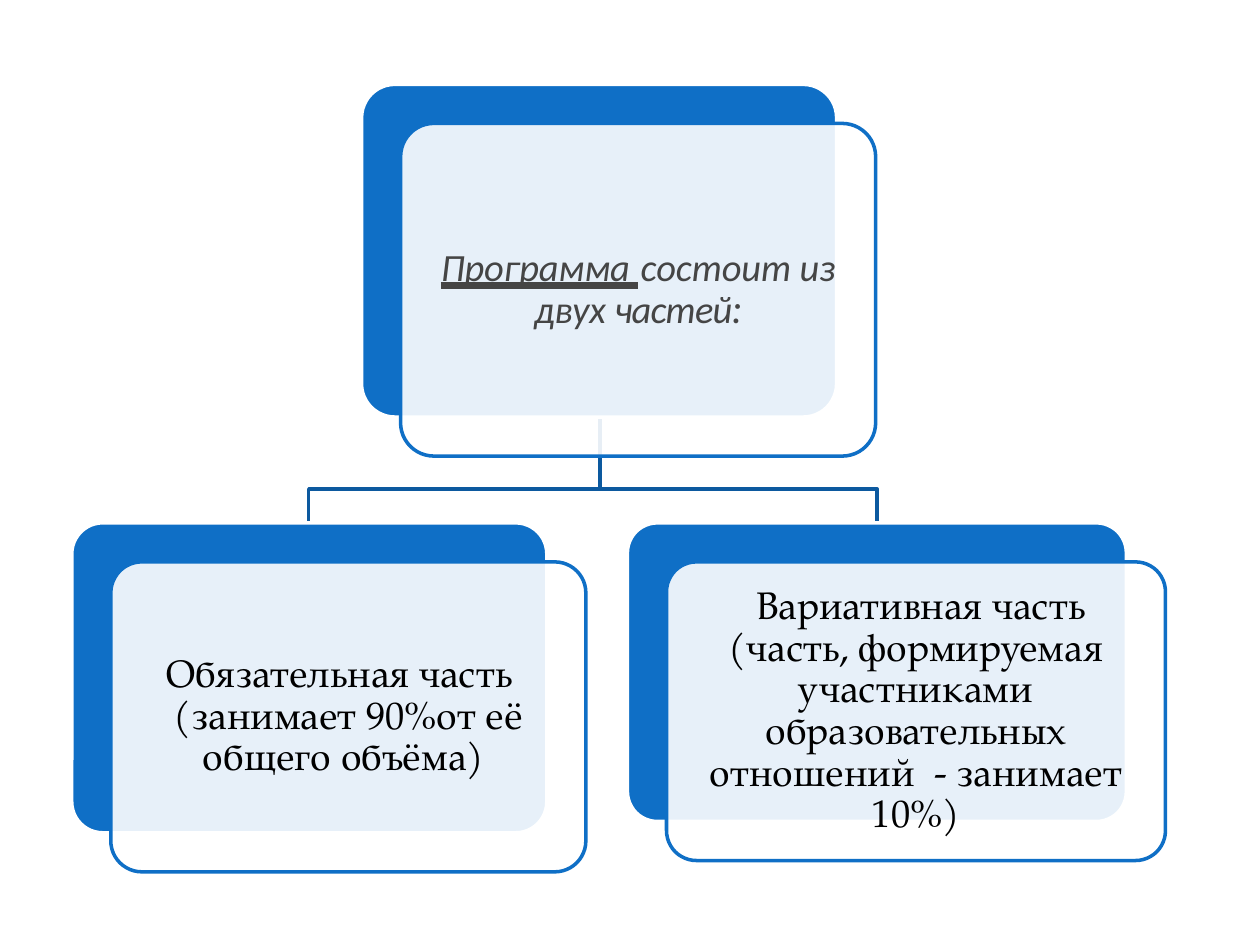
from lxml.etree import SubElement
from pptx import Presentation
from pptx.dml.color import RGBColor
from pptx.enum.shapes import MSO_SHAPE as Shape
from pptx.enum.text import MSO_ANCHOR as Anchor, MSO_UNDERLINE as Underline, PP_ALIGN as Align
from pptx.oxml.ns import qn
from pptx.util import Inches, Pt

BLUE = RGBColor(0x0F, 0x6F, 0xC6)
DARK_BLUE = RGBColor(0x0C, 0x59, 0x9F)
WHITE = RGBColor(0xFF, 0xFF, 0xFF)
GRAY = RGBColor(0x45, 0x45, 0x45)
BLACK = RGBColor(0, 0, 0)

CARD_OFFSET = 0.31   # front card relative to the blue card behind it
TEXT_INSET = 0.08    # label relative to the front card
BODY_FONT = "TeX Gyre Pagella"

# Text pieces of the root label: text, letter spacing in points, underlined, font
ROOT_LABEL = [
    ("Программа", -0.1, True, "Calibri"),
    (" ", 1.3, True, "Calibri"),
    ("состоит из двух ", -0.1, False, "Calibri"),
    ("частей", -0.5, False, "Calibri"),
    (":", -0.5, False, "Lato"),
]
REQUIRED_LABEL = "Обязательная часть   (занимает 90%от её общего объёма) "
VARIABLE_LABEL = (" Вариативная часть (часть, формируемая участниками "
                  "образовательных отношений  - занимает 10%)")


def add_branch(slide, points):
    """Draw an elbow line through the points."""
    start, *rest = [(Inches(x), Inches(y)) for x, y in points]
    builder = slide.shapes.build_freeform(*start)
    builder.add_line_segments(rest, close=False)
    branch = builder.convert_to_shape()
    branch.shadow.inherit = False
    branch.fill.background()
    branch.line.color.rgb = DARK_BLUE
    branch.line.width = Pt(2)


def add_card(slide, left, top, width, height, fill, line, opacity=100):
    card = slide.shapes.add_shape(Shape.ROUNDED_RECTANGLE, Inches(left), Inches(top),
                                  Inches(width), Inches(height))
    card.adjustments[0] = 0.1
    card.shadow.inherit = False
    card.fill.solid()
    card.fill.fore_color.rgb = fill
    card.line.color.rgb = line
    card.line.width = Pt(2)
    if opacity < 100:
        color = card.fill._xPr.find(qn("a:solidFill"))[0]
        SubElement(color, qn("a:alpha"), val=str(opacity * 1000))


def add_node(slide, left, top, width, height):
    """Draw a blue card with a translucent card over it; return its label paragraph."""
    add_card(slide, left, top, width, height, BLUE, WHITE)
    left, top = left + CARD_OFFSET, top + CARD_OFFSET
    add_card(slide, left, top, width, height, WHITE, BLUE, opacity=90)

    label = slide.shapes.add_textbox(
        Inches(left + TEXT_INSET), Inches(top + TEXT_INSET),
        Inches(width - 2 * TEXT_INSET), Inches(height - 2 * TEXT_INSET))
    frame = label.text_frame
    frame.word_wrap = True
    frame.vertical_anchor = Anchor.MIDDLE
    frame.margin_left = frame.margin_right = Inches(0.09)
    frame.margin_top = frame.margin_bottom = Inches(0.09)
    paragraph = frame.paragraphs[0]
    paragraph.alignment = Align.CENTER
    paragraph.line_spacing = 0.9
    return paragraph


def format_run(run, font, color):
    run.font.name = font
    run.font.size = Pt(22)
    run.font.color.rgb = color


def write_root_label(paragraph):
    for text, spacing, underlined, font in ROOT_LABEL:
        run = paragraph.add_run()
        run.text = text
        format_run(run, font, GRAY)
        run.font.italic = True
        run.font.underline = Underline.HEAVY_LINE if underlined else False
        run.font._element.set("spc", str(round(spacing * 100)))


def write_part_label(paragraph, text):
    paragraph.text = text
    format_run(paragraph.runs[0], BODY_FONT, BLACK)


def main():
    prs = Presentation()
    prs.slide_width, prs.slide_height = Inches(10), Inches(7.5)
    slide = prs.slides.add_slide(prs.slide_layouts[6])

    # Branches from the root to both parts
    root_x, root_bottom, bend_y, parts_top = 4.76, 3.31, 3.88, 4.15
    for part_x in (6.96, 2.45):
        add_branch(slide, [(root_x, root_bottom), (root_x, bend_y),
                           (part_x, bend_y), (part_x, parts_top)])

    # Root and the two parts of the programme
    write_root_label(add_node(slide, 2.87, 0.67, 3.77, 2.64))
    write_part_label(add_node(slide, 0.57, parts_top, 3.77, 2.46), REQUIRED_LABEL)
    write_part_label(add_node(slide, 4.98, parts_top, 3.96, 2.37), VARIABLE_LABEL)

    prs.save("out.pptx")


if __name__ == "__main__":
    main()
